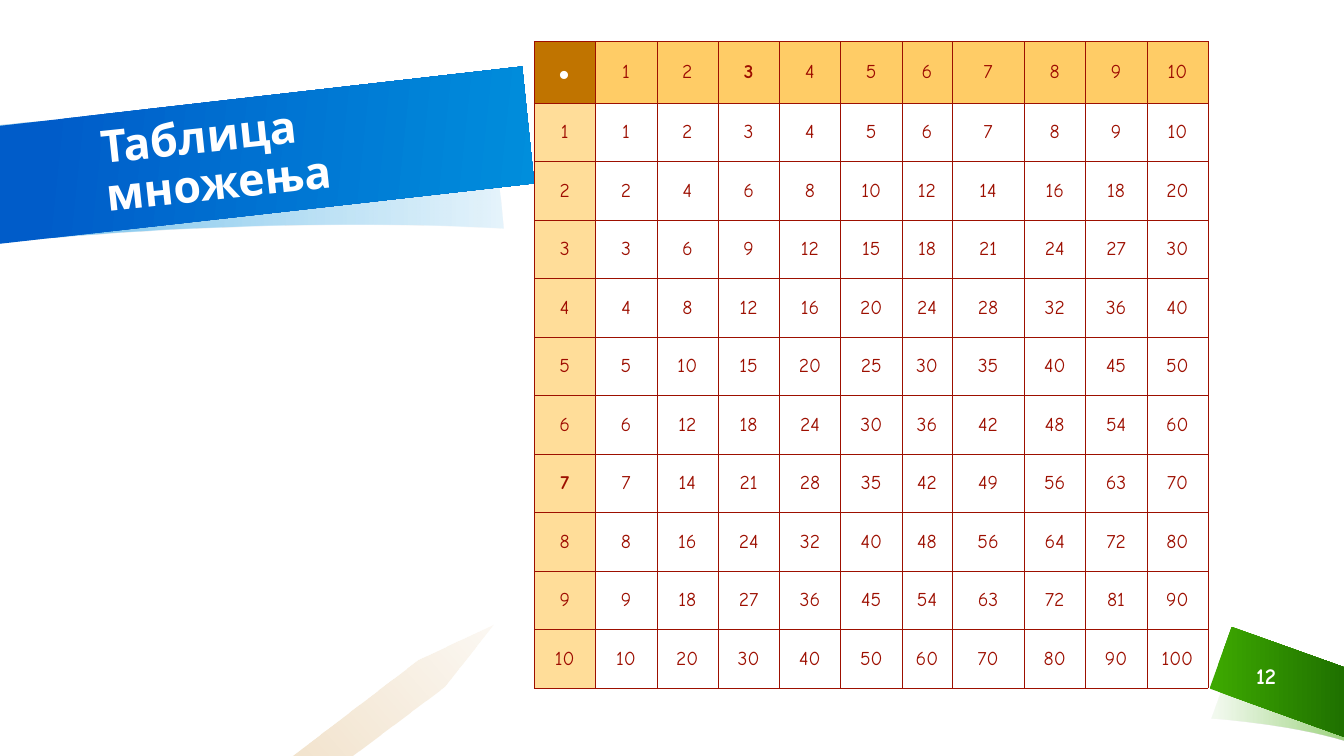
from dataclasses import dataclass

from lxml import etree
from pptx import Presentation
from pptx.dml.color import RGBColor
from pptx.enum.text import MSO_ANCHOR, PP_ALIGN
from pptx.oxml.ns import qn
from pptx.slide import Slide
from pptx.table import _Cell
from pptx.util import Pt

MIDDLE = MSO_ANCHOR.MIDDLE
CENTER = PP_ALIGN.CENTER
LEFT = PP_ALIGN.LEFT

WHITE = RGBColor(0xFF, 0xFF, 0xFF)
GREEN = RGBColor(0x3D, 0xA8, 0x00)
DARK_GREEN = RGBColor(0x1F, 0x71, 0x00)
BLUE = RGBColor(0x00, 0x8E, 0xDC)
DARK_BLUE = RGBColor(0x00, 0x5C, 0xC9)
BROWN = RGBColor(0xC0, 0x74, 0x00)
ORANGE = RGBColor(0xFF, 0xCC, 0x66)
PALE_ORANGE = RGBColor(0xFF, 0xDD, 0x99)
HEAD_RED = RGBColor(0x9E, 0x0B, 0x00)
RED = RGBColor(0x9D, 0x0F, 0x00)

FONT = "Comic Neue"
SIZE = 10
HIGHLIGHT_ROW, HIGHLIGHT_COL = 7, 3
COL_WIDTH, ROW_HEIGHT = 43.8, 41.79
SPECIAL_WIDTHS = {6: 35.8, 7: 51.5}


@dataclass
class Stop:
    position: float
    color: RGBColor
    opacity: int = 100


@dataclass
class Ribbon:
    points: list[tuple[float, float]]
    stops: tuple[Stop, Stop]
    angle: float = 0
    curve_starts: tuple[int, ...] = ()


@dataclass
class Label:
    text: str
    left: float
    top: float
    width: float
    height: float
    size: float
    align: PP_ALIGN
    rotation: float = 0
    line_spacing: float = 1.0


RIBBONS = [
    Ribbon([(865.4, 513.4), (865.4, 513.4), (920.2, 517), (960, 529.2),
            (960, 481), (915.8, 468.7), (881.3, 469.4), (881.3, 469.4)],
           (Stop(0.03, GREEN, 6), Stop(1, GREEN, 50)), curve_starts=(1, 5)),
    Ribbon([(960, 476.6), (879.8, 447.8), (864, 491.8), (960, 526.3)],
           (Stop(0.03, GREEN), Stop(1, DARK_GREEN))),
    Ribbon([(359.3, 163.4), (350.6, 81.4), (350.6, 81.4), (225.4, 67.7), (-1.4, 90),
            (-1.4, 173.5), (205.9, 152.6), (359.3, 163.4), (359.3, 163.4)],
           (Stop(0, BLUE, 10), Stop(0.88, BLUE, 50)), 180, (2, 6)),
    Ribbon([(-0.7, 174.2), (381.6, 131), (373, 47.5), (-0.7, 90)],
           (Stop(0.09, DARK_BLUE), Stop(1, BLUE)), 354),
    Ribbon([(352.8, 446.4), (298.8, 471.6), (208.8, 540), (252, 540), (317.5, 491)],
           (Stop(0, BROWN, 5), Stop(1, BROWN, 20)), 221),
]

LABELS = [
    Label("12", 879.1, 468, 50.4, 28.8, 16, CENTER),
    Label("Таблица множења", 66.2, 66.2, 311.8, 83.5, 32, LEFT, 354, 0.9),
]


def add_ribbon(s: Slide, ribbon: Ribbon) -> None:
    points = [(Pt(x), Pt(y)) for x, y in ribbon.points]
    builder = s.shapes.build_freeform(*points[0])
    builder.add_line_segments(points[1:], close=True)
    sp = builder.convert_to_shape()
    sp.shadow.inherit = False
    sp.line.fill.background()

    segments = list(sp._element.iter(qn("a:lnTo")))
    for start in ribbon.curve_starts:
        first, *others = segments[start - 1:start + 2]
        first.tag = qn("a:cubicBezTo")
        for segment in others:
            first.append(segment[0])
            segment.getparent().remove(segment)

    sp.fill.gradient()
    sp.fill.gradient_angle = ribbon.angle
    for target, stop in zip(sp.fill.gradient_stops, ribbon.stops):
        target.position = stop.position
        target.color.rgb = stop.color
    for color, stop in zip(sp._element.spPr.iter(qn("a:srgbClr")), ribbon.stops):
        if stop.opacity < 100:
            etree.SubElement(color, qn("a:alpha"), val=str(stop.opacity * 1000))


def add_label(s: Slide, label: Label) -> None:
    sp = s.shapes.add_textbox(Pt(label.left), Pt(label.top), Pt(label.width), Pt(label.height))
    sp.rotation = label.rotation
    tf = sp.text_frame
    tf.word_wrap = True
    tf.vertical_anchor = MIDDLE
    p = tf.paragraphs[0]
    p.text = label.text
    p.alignment = label.align
    p.line_spacing = label.line_spacing
    p.font.name = FONT
    p.font.size = Pt(label.size)
    p.font.bold = True
    p.font.color.rgb = WHITE


def style_cell(cell: _Cell, text: str, fill: RGBColor, color: RGBColor,
               size: float = 14, bold: bool = False) -> None:
    tc_pr = cell._tc.get_or_add_tcPr()
    for side in ("lnL", "lnR", "lnT", "lnB"):
        line = etree.SubElement(tc_pr, qn(f"a:{side}"), w=str(Pt(0.25)))
        solid = etree.SubElement(line, qn("a:solidFill"))
        etree.SubElement(solid, qn("a:srgbClr"), val=str(RED))
    cell.fill.solid()
    cell.fill.fore_color.rgb = fill
    cell.vertical_anchor = MIDDLE
    p = cell.text_frame.paragraphs[0]
    p.text = text
    p.alignment = CENTER
    p.font.name = FONT
    p.font.size = Pt(size)
    p.font.bold = bold
    p.font.color.rgb = color


def add_multiplication_table(s: Slide) -> None:
    widths = [SPECIAL_WIDTHS.get(col, COL_WIDTH) for col in range(SIZE + 1)]
    table = s.shapes.add_table(SIZE + 1, SIZE + 1, Pt(381.5), Pt(29.5),
                               Pt(sum(widths)), Pt(ROW_HEIGHT * (SIZE + 1))).table
    table.first_row = False
    table.horz_banding = False
    for column, width in zip(table.columns, widths):
        column.width = Pt(width)
    for row in table.rows:
        row.height = Pt(ROW_HEIGHT)

    style_cell(table.cell(0, 0), "•", BROWN, WHITE, size=32)
    for n in range(1, SIZE + 1):
        for cell, fill, highlight in (
            (table.cell(0, n), ORANGE, HIGHLIGHT_COL),
            (table.cell(n, 0), PALE_ORANGE, HIGHLIGHT_ROW),
        ):
            bold = n == highlight
            style_cell(cell, str(n), fill, RED if bold else HEAD_RED, bold=bold)
        for m in range(1, SIZE + 1):
            style_cell(table.cell(n, m), str(n * m), WHITE, RED)


def main() -> None:
    prs = Presentation()
    prs.slide_width, prs.slide_height = Pt(960), Pt(540)
    s = prs.slides.add_slide(prs.slide_layouts[6])
    for ribbon in RIBBONS:
        add_ribbon(s, ribbon)
    add_multiplication_table(s)
    for label in LABELS:
        add_label(s, label)
    prs.save("out.pptx")


if __name__ == "__main__":
    main()
